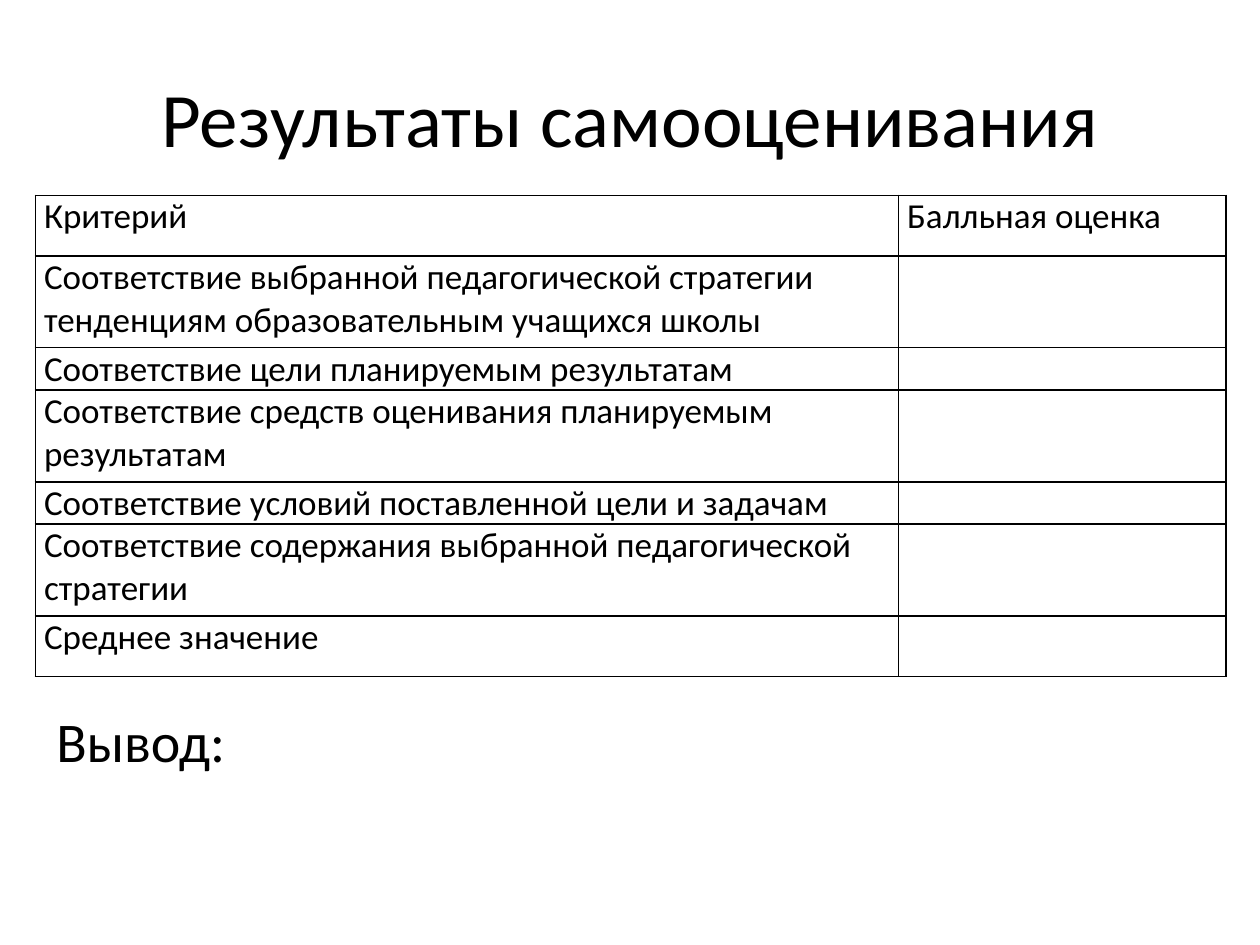
from lxml.etree import SubElement
from pptx import Presentation
from pptx.dml.color import RGBColor
from pptx.enum.text import MSO_ANCHOR, PP_ALIGN
from pptx.oxml.ns import qn
from pptx.util import Inches, Pt

BLACK = RGBColor(0, 0, 0)
FONT = "Calibri"
COLUMN_WIDTHS = (6.85, 2.6)
SCORE_ROWS = [
    # criterion, score, row height
    ("Критерий", "Балльная оценка", 0.48),
    ("Соответствие выбранной педагогической стратегии "
     "тенденциям образовательным учащихся школы", "", 0.73),
    ("Соответствие цели планируемым результатам", "", 0.32),
    ("Соответствие средств оценивания планируемым результатам", "", 0.73),
    ("Соответствие условий поставленной цели и задачам", "", 0.32),
    ("Соответствие содержания выбранной педагогической стратегии", "", 0.73),
    ("Среднее значение", "", 0.48),
]


def write_text(text_frame, text, size, align=PP_ALIGN.LEFT, space_before=0):
    paragraph = text_frame.paragraphs[0]
    paragraph.alignment = align
    paragraph.space_before = Pt(space_before)
    run = paragraph.add_run()
    run.text = text
    run.font.name = FONT
    run.font.size = Pt(size)
    run.font.color.rgb = BLACK


def add_cell_borders(cell, width=1):
    properties = cell._tc.get_or_add_tcPr()
    for position, side in enumerate(("a:lnL", "a:lnR", "a:lnT", "a:lnB")):
        line = properties.makeelement(qn(side), {"w": str(Pt(width))})
        fill = SubElement(line, qn("a:solidFill"))
        SubElement(fill, qn("a:srgbClr"), val=str(BLACK))
        properties.insert(position, line)


class SlideBuilder:
    def __init__(self, presentation):
        self.slide = presentation.slides.add_slide(presentation.slide_layouts[5])

    def title(self, text, left, top, width, height, size=44):
        shape = self.slide.shapes.title
        shape.left, shape.top = Inches(left), Inches(top)
        shape.width, shape.height = Inches(width), Inches(height)
        shape.text_frame.vertical_anchor = MSO_ANCHOR.MIDDLE
        write_text(shape.text_frame, text, size, align=PP_ALIGN.CENTER)

    def text(self, text, left, top, width, height, size=32):
        shape = self.slide.shapes.add_textbox(
            Inches(left), Inches(top), Inches(width), Inches(height))
        shape.text_frame.word_wrap = True
        write_text(shape.text_frame, text, size, space_before=0.2 * size)

    def table(self, rows, column_widths, left, top, size=20):
        heights = [row[-1] for row in rows]
        table = self.slide.shapes.add_table(
            len(rows), len(column_widths), Inches(left), Inches(top),
            Inches(sum(column_widths)), Inches(sum(heights))).table
        for column, width in zip(table.columns, column_widths):
            column.width = Inches(width)
        for table_row, (*texts, height) in zip(table.rows, rows):
            table_row.height = Inches(height)
            for cell, text in zip(table_row.cells, texts):
                cell.margin_left = cell.margin_right = Inches(0.07)
                cell.margin_top = cell.margin_bottom = 0
                cell.fill.background()
                add_cell_borders(cell)
                if text:
                    write_text(cell.text_frame, text, size)


def main():
    presentation = Presentation()
    presentation.slide_width = Inches(10)
    presentation.slide_height = Inches(7.5)
    builder = SlideBuilder(presentation)
    builder.title("Результаты самооценивания", 0.5, 0.3, 9, 1.25)
    builder.text("Вывод:", 0.35, 5.56, 9, 0.74)
    builder.table(SCORE_ROWS, COLUMN_WIDTHS, 0.28, 1.55)
    presentation.save("out.pptx")


if __name__ == "__main__":
    main()
